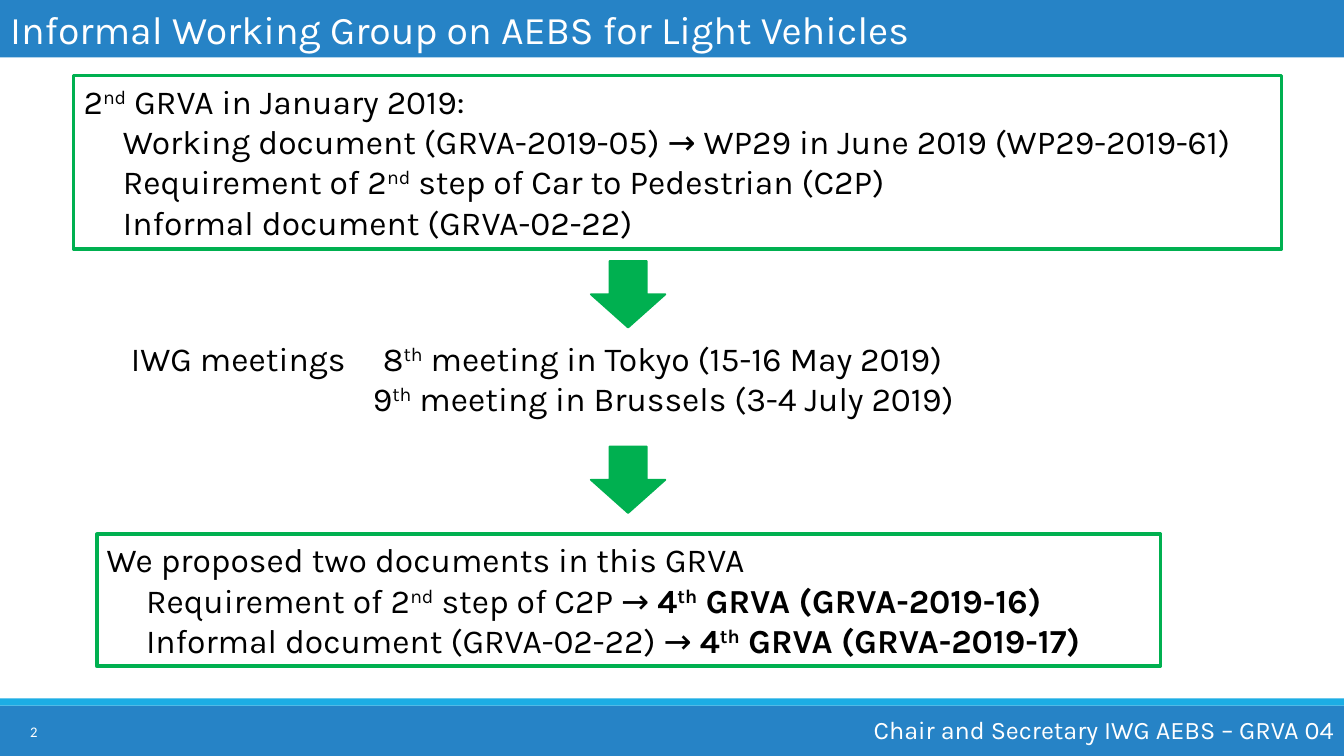
from pptx import Presentation
from pptx.dml.color import RGBColor
from pptx.enum.shapes import MSO_SHAPE
from pptx.enum.text import MSO_ANCHOR, MSO_AUTO_SIZE, PP_ALIGN
from pptx.oxml.ns import qn
from pptx.util import Pt
from lxml import etree

RECT, DOWN_ARROW = MSO_SHAPE.RECTANGLE, MSO_SHAPE.DOWN_ARROW
LEFT, RIGHT = PP_ALIGN.LEFT, PP_ALIGN.RIGHT
TOP, MIDDLE = MSO_ANCHOR.TOP, MSO_ANCHOR.MIDDLE
PX = 9144  # 100 px to the inch
BLUE, CYAN, GREEN = "2683C6", "1CADE4", "00B050"
WHITE, BLACK = "FFFFFF", "000000"
INDENT = 39
TAB = 238

prs = Presentation()
prs.slide_width, prs.slide_height = 1333 * PX, 750 * PX
s = prs.slides.add_slide(prs.slide_layouts[5])


def add_box(x, y, w, h, shape=RECT, fill=None, line=None, width=2.5):
    sp = s.shapes.add_shape(shape, x * PX, y * PX, w * PX, h * PX)
    sp.shadow.inherit = False
    if fill:
        sp.fill.solid()
        sp.fill.fore_color.rgb = RGBColor.from_string(fill)
    else:
        sp.fill.background()
    if line:
        sp.line.color.rgb = RGBColor.from_string(line)
        sp.line.width = Pt(width)
    else:
        sp.line.fill.background()
    return sp


def write(sp, lines, size=24, color=BLACK, font="Karla", align=LEFT, anchor=TOP):
    """Lines are (indent, text); *...* is bold and ^...^ is superscript."""
    tf = sp.text_frame
    tf.word_wrap = True
    tf.auto_size = MSO_AUTO_SIZE.NONE
    tf.vertical_anchor = anchor
    for i, (indent, text) in enumerate(lines):
        p = tf.paragraphs[0] if i == 0 else tf.add_paragraph()
        p.alignment = align
        pPr = p._p.get_or_add_pPr()
        pPr.set("marL", str(indent * PX))
        pPr.set("indent", "0")
        if "\t" in text:
            tabs = etree.SubElement(pPr, qn("a:tabLst"))
            etree.SubElement(tabs, qn("a:tab"), pos=str(TAB * PX), algn="l")
        for b, part in enumerate(text.split("*")):
            for sup, piece in enumerate(part.split("^")):
                if not piece:
                    continue
                r = p.add_run()
                r.text = piece
                r.font.name, r.font.size = font, Pt(size)
                r.font.bold = b % 2 == 1
                r.font.color.rgb = RGBColor.from_string(color)
                if sup % 2:
                    r.font._element.set("baseline", "30000")


# Title bar
title = s.shapes.title
title.left, title.top, title.width, title.height = 0, 0, 1333 * PX, 57 * PX
title.fill.solid()
title.fill.fore_color.rgb = RGBColor.from_string(BLUE)
write(title, [(0, "Informal Working Group on AEBS for Light Vehicles")],
      size=28, color=WHITE)

# Footer
add_box(0, 700, 1333, 50, fill=BLUE)
add_box(0, 693, 1333, 7, fill=CYAN)
number = s.shapes.add_textbox(0, 706 * PX, 47 * PX, 40 * PX)
write(number, [(0, "2")], size=10.5, color=WHITE, font="Calibri",
      align=RIGHT, anchor=MIDDLE)
footer = s.shapes.add_textbox(842 * PX, 704 * PX, 491 * PX, 40 * PX)
write(footer, [(0, "Chair and Secretary IWG AEBS – GRVA 04")],
      size=18, color=WHITE, align=RIGHT)

# January session
write(add_box(73, 75, 1198, 172, line=GREEN), [
    (0, "2^nd^ GRVA in January 2019:"),
    (INDENT, "Working document (GRVA-2019-05) → WP29 in June 2019 (WP29-2019-61)"),
    (INDENT, "Requirement of 2^nd^ step of Car to Pedestrian (C2P)"),
    (INDENT, "Informal document (GRVA-02-22)"),
])

# Meetings
meetings = s.shapes.add_textbox(120 * PX, 330 * PX, 1081 * PX, 91 * PX)
write(meetings, [
    (0, "IWG meetings\t8^th^ meeting in Tokyo (15-16 May 2019)"),
    (240, "9^th^ meeting in Brussels (3-4 July 2019)"),
])

# Proposed documents
write(add_box(96, 530, 1055, 131, line=GREEN), [
    (0, "We proposed two documents in this GRVA"),
    (INDENT, "Requirement of 2^nd^ step of C2P → *4^th^ GRVA (GRVA-2019-16)*"),
    (INDENT, "Informal document (GRVA-02-22) → *4^th^ GRVA (GRVA-2019-17)*"),
])

# Arrows between the stages
for y in (259, 443):
    add_box(586, y, 74, 66, shape=DOWN_ARROW, fill=GREEN, line=GREEN, width=1.25)

prs.save("out.pptx")
